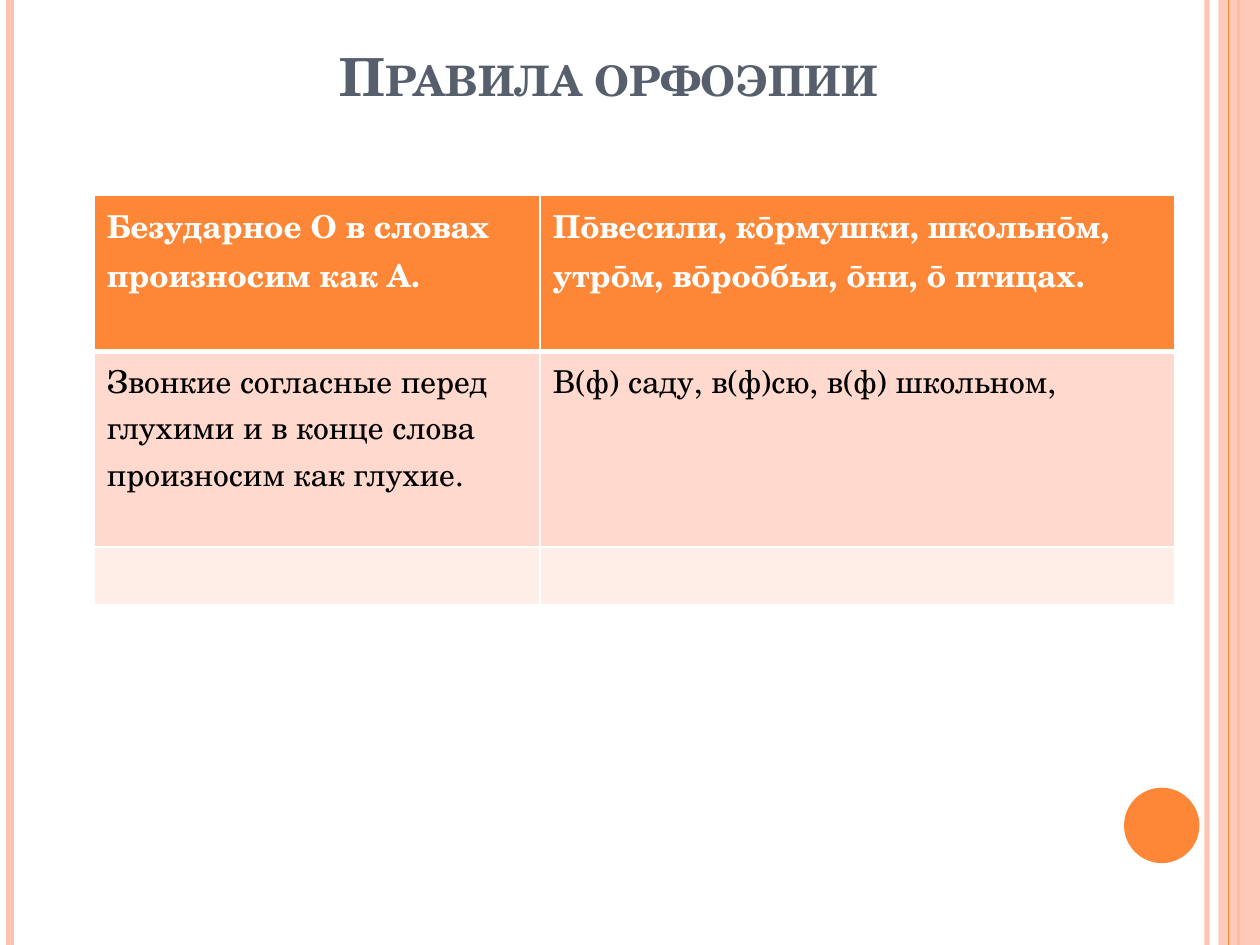
from lxml import etree
from pptx import Presentation
from pptx.dml import color
from pptx.enum import shapes, text
from pptx.oxml import ns
from pptx.util import Cm, Pt

FONT = "TeX Gyre Schola"
ORANGE, PEACH, WHITE = "FE8637", "FEC3AE", "FFFFFF"
HEIGHT = 19.05

ROWS = [
    ("Безударное О в словах произносим как А.",
     "Пōвесили, кōрмушки, школьнōм, утрōм, вōроōбьи, ōни, ō птицах."),
    ("Звонкие согласные перед глухими и в конце слова произносим как глухие.",
     "В(ф) саду, в(ф)сю, в(ф) школьном,"),
    ("", ""),
]
ROW_FORMATS = [
    {"height": 3.15, "fill": ORANGE, "color": WHITE, "bold": True},
    {"height": 3.94, "fill": "FFD9CE", "color": "000000", "bold": False},
    {"height": 1.17, "fill": "FFEDE8", "color": "000000", "bold": False},
]
COLUMN_WIDTHS = (8.99, 12.8)
STRIPES = [
    (24.33, PEACH, 3, 93),
    (0.21, PEACH, 4.5, 100),
    (24.97, ORANGE, 1.5, 100),
]


def rgb(value):
    return color.RGBColor.from_string(value)


def set_fill(target, value):
    target.fill.solid()
    target.fill.fore_color.rgb = rgb(value)


def set_alpha(element, percent):
    if percent < 100:
        for node in element.iter(ns.qn("a:srgbClr")):
            etree.SubElement(node, ns.qn("a:alpha"), val=str(percent * 1000))


def format_font(font, value, **formats):
    for name, setting in {"name": FONT, **formats}.items():
        setattr(font, name, setting)
    font.color.rgb = rgb(value)


def add_stripe(slide, x, value, width, opacity):
    stripe = slide.shapes.add_connector(
        shapes.MSO_CONNECTOR.STRAIGHT, Cm(x), Cm(0), Cm(x), Cm(HEIGHT))
    stripe.line.width = Pt(width)
    stripe.line.color.rgb = rgb(value)
    properties = stripe.line._get_or_add_ln().getparent()
    set_alpha(properties, opacity)
    etree.SubElement(properties, ns.qn("a:effectLst"))


def add_block(slide, kind, box, value, opacity=100):
    shape = slide.shapes.add_shape(kind, *map(Cm, box))
    shape.shadow.inherit = False
    set_fill(shape, value)
    shape.line.fill.background()
    set_alpha(shape._element.spPr, opacity)


def add_title(slide, wording):
    title = slide.shapes.title
    title.left, title.top, title.width, title.height = map(
        Cm, (1.9, 0.53, 20.75, 1.75))
    frame = title.text_frame
    frame.text = wording
    frame.vertical_anchor = text.MSO_ANCHOR.BOTTOM
    paragraph = frame.paragraphs[0]
    paragraph.alignment = text.PP_ALIGN.CENTER
    run = paragraph.runs[0]
    format_font(run.font, "575F6D", size=Pt(30), bold=True)
    run._r.get_or_add_rPr().set("cap", "small")


def set_borders(cell, widths):
    properties = cell._tc.get_or_add_tcPr()
    for index, (side, width) in enumerate(widths.items()):
        line = etree.Element(ns.qn(f"a:ln{side}"), w=str(Pt(width)))
        fill = etree.SubElement(line, ns.qn("a:solidFill"))
        etree.SubElement(fill, ns.qn("a:srgbClr"), val=WHITE)
        properties.insert(index, line)


def add_rules_table(slide):
    height = sum(formats["height"] for formats in ROW_FORMATS)
    table = slide.shapes.add_table(
        len(ROWS), len(COLUMN_WIDTHS), Cm(1.9), Cm(3.94),
        Cm(sum(COLUMN_WIDTHS)), Cm(height)).table
    for column, width in zip(table.columns, COLUMN_WIDTHS):
        column.width = Cm(width)
    for index, (wordings, formats) in enumerate(zip(ROWS, ROW_FORMATS)):
        row = table.rows[index]
        row.height = Cm(formats["height"])
        top, bottom = {0: (1, 3), 1: (3, 1)}.get(index, (1, 1))
        for cell, wording in zip(row.cells, wordings):
            set_fill(cell, formats["fill"])
            set_borders(cell, {"L": 1, "R": 1, "T": top, "B": bottom})
            cell.text = wording
            for run in cell.text_frame.paragraphs[0].runs:
                format_font(run.font, formats["color"],
                            size=Pt(18), bold=formats["bold"])


def main():
    presentation = Presentation()
    presentation.slide_width, presentation.slide_height = Cm(25.4), Cm(HEIGHT)
    slide = presentation.slides.add_slide(presentation.slide_layouts[5])
    for stripe in STRIPES:
        add_stripe(slide, *stripe)
    kinds = shapes.MSO_SHAPE
    add_block(slide, kinds.RECTANGLE, (24.56, 0, 0.84, HEIGHT), PEACH, 87)
    add_stripe(slide, 24.77, ORANGE, 0.75, 100)
    add_block(slide, kinds.OVAL, (22.66, 15.88, 1.52, 1.52), ORANGE)
    add_title(slide, "Правила орфоэпии")
    add_rules_table(slide)
    presentation.save("out.pptx")


if __name__ == "__main__":
    main()
